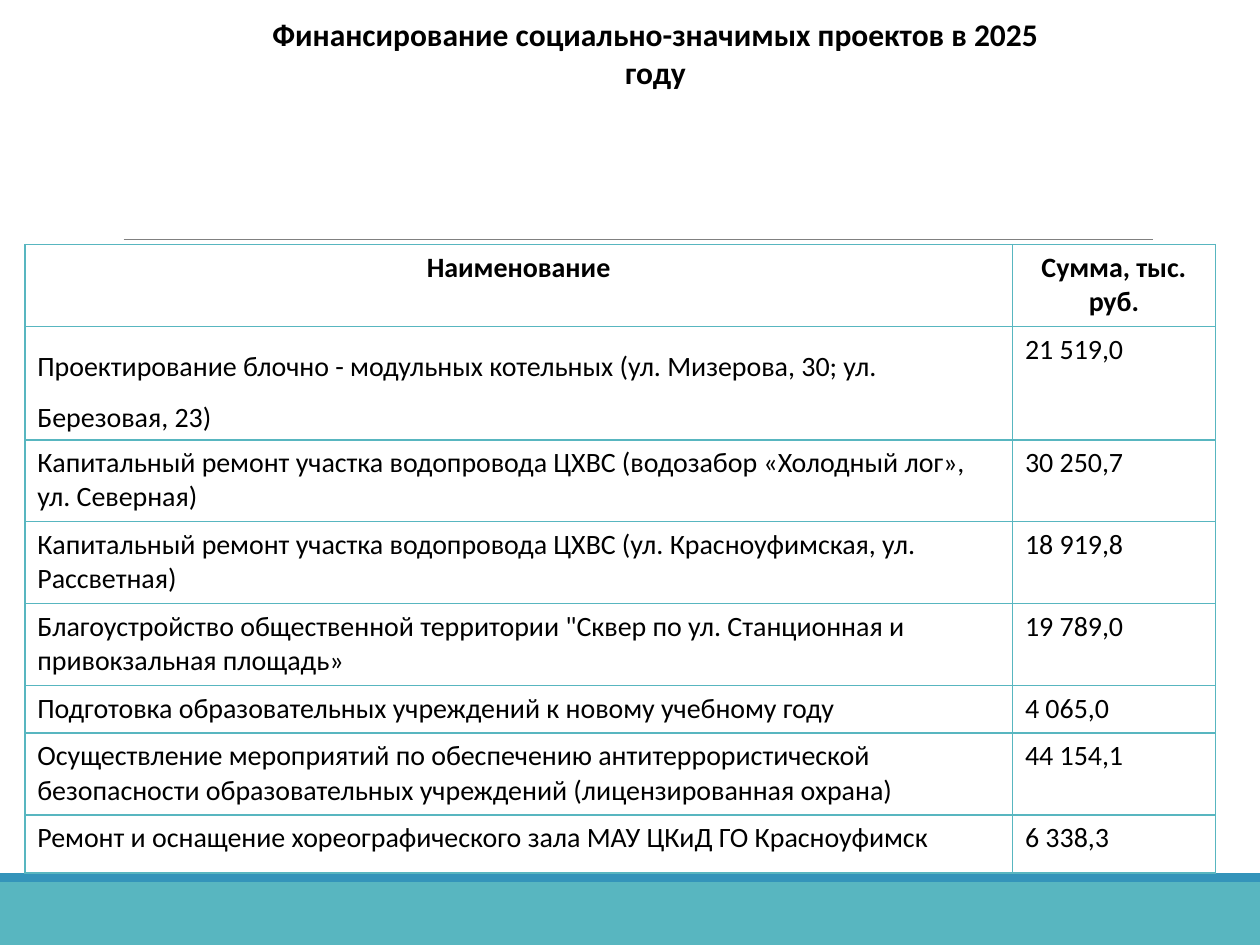
from dataclasses import dataclass

from lxml import etree
from pptx import Presentation
from pptx.dml.color import RGBColor
from pptx.enum.shapes import MSO_CONNECTOR, MSO_SHAPE
from pptx.enum.text import PP_ALIGN
from pptx.oxml.ns import qn
from pptx.util import Cm, Pt

LEFT, CENTER = PP_ALIGN.LEFT, PP_ALIGN.CENTER
RECT, STRAIGHT = MSO_SHAPE.RECTANGLE, MSO_CONNECTOR.STRAIGHT


@dataclass(frozen=True)
class Theme:
    font: str = "Calibri"
    text: str = "000000"
    teal: str = "58B6C0"
    blue: str = "3494BA"
    rule: str = "808080"
    title_size: float = 18
    table_size: float = 16
    rule_width: float = 0.5
    border_width: float = 1


def write(tf, text, *, font, size, color, bold=False, align=LEFT, spacing=None):
    tf.word_wrap = True
    p = tf.paragraphs[0]
    p.alignment = align
    if spacing:
        p.line_spacing = spacing
    r = p.add_run()
    r.text = text
    r.font.name = font
    r.font.size = Pt(size)
    r.font.bold = bold
    r.font.color.rgb = RGBColor.from_string(color)


class SlideBuilder:
    def __init__(self, prs, theme):
        self.theme = theme
        self.s = prs.slides.add_slide(prs.slide_layouts[6])

    def rule(self, x1, x2, y):
        ln = self.s.shapes.add_connector(STRAIGHT, Cm(x1), Cm(y), Cm(x2), Cm(y))
        ln.line.color.rgb = RGBColor.from_string(self.theme.rule)
        ln.line.width = Pt(self.theme.rule_width)
        etree.SubElement(ln._element.spPr, qn("a:effectLst"))

    def band(self, x, y, w, h, color):
        sp = self.s.shapes.add_shape(RECT, Cm(x), Cm(y), Cm(w), Cm(h))
        sp.shadow.inherit = False
        sp.fill.solid()
        sp.fill.fore_color.rgb = RGBColor.from_string(color)
        sp.line.fill.background()

    def title(self, x, y, w, h, text):
        sp = self.s.shapes.add_textbox(Cm(x), Cm(y), Cm(w), Cm(h))
        write(sp.text_frame, text, font=self.theme.font, size=self.theme.title_size,
              color=self.theme.text, bold=True, align=CENTER)

    def border(self, cell):
        tcPr = cell._tc.get_or_add_tcPr()
        for side in ("a:lnL", "a:lnR", "a:lnT", "a:lnB"):
            ln = etree.SubElement(tcPr, qn(side), w=str(Pt(self.theme.border_width)))
            fill = etree.SubElement(ln, qn("a:solidFill"))
            etree.SubElement(fill, qn("a:srgbClr"), val=self.theme.teal)

    def table(self, x, y, widths, heights, rows, spacings):
        frame = self.s.shapes.add_table(len(rows), len(widths), Cm(x), Cm(y),
                                        Cm(sum(widths)), Cm(sum(heights)))
        table = frame.table
        table.first_row = table.horz_banding = False
        for column, width in zip(table.columns, widths):
            column.width = Cm(width)
        for i, (values, height) in enumerate(zip(rows, heights)):
            table.rows[i].height = Cm(height)
            header = i == 0
            for j, text in enumerate(values):
                cell = table.cell(i, j)
                self.border(cell)
                cell.fill.background()
                write(cell.text_frame, text, font=self.theme.font,
                      size=self.theme.table_size, color=self.theme.text, bold=header,
                      align=CENTER if header else LEFT, spacing=spacings.get((i, j)))


ROWS = [
    ("Наименование", "Сумма, тыс. руб."),
    ("Проектирование блочно - модульных котельных (ул. Мизерова, 30; ул. Березовая, 23)",
     "21 519,0"),
    ("Капитальный ремонт участка водопровода ЦХВС (водозабор «Холодный лог», ул. Северная)",
     "30 250,7"),
    ("Капитальный ремонт участка водопровода ЦХВС (ул. Красноуфимская, ул. Рассветная)",
     "18 919,8"),
    ("Благоустройство общественной территории \"Сквер по ул. Станционная и "
     "привокзальная площадь»", "19 789,0"),
    ("Подготовка образовательных учреждений к новому учебному году", "4 065,0"),
    ("Осуществление мероприятий по обеспечению антитеррористической безопасности "
     "образовательных учреждений (лицензированная охрана)", "44 154,1"),
    ("Ремонт и оснащение хореографического зала МАУ ЦКиД ГО Красноуфимск", "6 338,3"),
]
ONE_LINE, TWO_LINES, SPACED, LAST = 0.96, 1.65, 2.24, 1.17
HEIGHTS = [TWO_LINES, SPACED, TWO_LINES, TWO_LINES, TWO_LINES, ONE_LINE, TWO_LINES, LAST]


def main():
    prs = Presentation()
    prs.slide_width, prs.slide_height = Cm(25.4), Cm(19.05)
    theme = Theme()
    b = SlideBuilder(prs, theme)
    b.rule(2.49, 23.24, 4.83)
    b.band(0, 17.78, 25.4, 1.27, theme.teal)
    b.band(0, 17.6, 25.4, 0.18, theme.blue)
    b.title(5.11, 0.18, 16.21, 1.8, "Финансирование социально-значимых проектов в 2025 году")
    b.table(0.5, 4.93, [19.91, 4.09], HEIGHTS, ROWS, {(1, 0): 1.5})
    prs.save("out.pptx")


if __name__ == "__main__":
    main()
